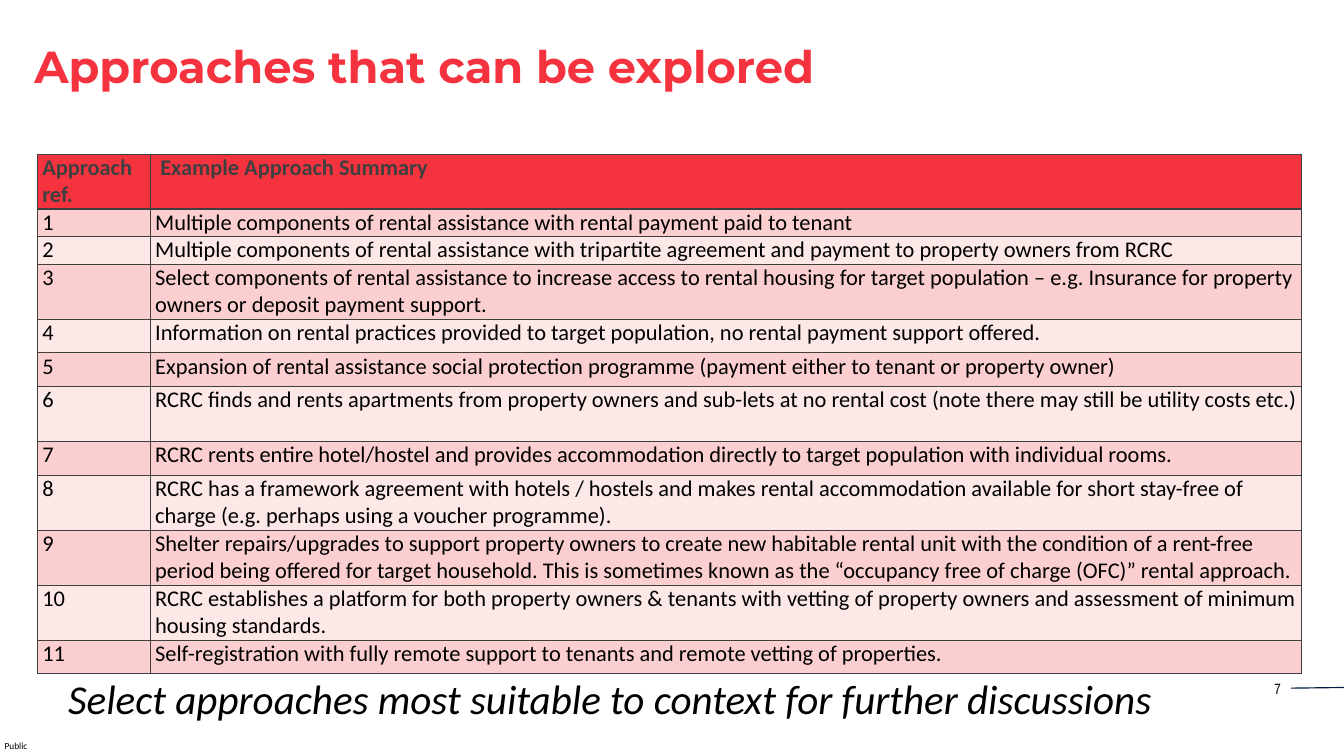
from lxml.etree import SubElement
from pptx import Presentation
from pptx.dml.color import RGBColor
from pptx.enum.shapes import MSO_CONNECTOR as Connector
from pptx.enum.text import MSO_ANCHOR as Anchor, PP_ALIGN as Align
from pptx.oxml.ns import qn
from pptx.util import Pt

RED = RGBColor(0xF5, 0x33, 0x3F)
PINK = RGBColor(0xFB, 0xCE, 0xCF)
PALE_PINK = RGBColor(0xFD, 0xE8, 0xE8)
GREY = RGBColor(0x3F, 0x3F, 0x3F)
NAVY = RGBColor(0x00, 0x1D, 0x41)
BLACK = RGBColor(0x00, 0x00, 0x00)

ONE_LINE, ROOMY, TWO_LINES = 29.5, 36, 59
HEADER = ("Approach ref.", " Example Approach Summary")
APPROACHES = [
    (ONE_LINE, "Multiple components of rental assistance with rental payment paid to tenant"),
    (ONE_LINE, "Multiple components of rental assistance with tripartite agreement and payment "
               "to property owners from RCRC"),
    (TWO_LINES, "Select components of rental assistance to increase access to rental housing for "
                "target population – e.g. Insurance for property owners or deposit payment support."),
    (ROOMY, "Information on rental practices provided to target population, no rental payment "
            "support offered."),
    (ROOMY, "Expansion of rental assistance social protection programme (payment either to "
            "tenant or property owner)"),
    (TWO_LINES, "RCRC finds and rents apartments from property owners and sub-lets at no rental "
                "cost (note there may still be utility costs etc.)"),
    (ROOMY, "RCRC rents entire hotel/hostel and provides accommodation directly to target "
            "population with individual rooms."),
    (TWO_LINES, "RCRC has a framework agreement with hotels / hostels and makes rental "
                "accommodation available for short stay-free of charge (e.g. perhaps using a "
                "voucher programme)."),
    (TWO_LINES, "Shelter repairs/upgrades to support property owners to create new habitable "
                "rental unit with the condition of a rent-free period being offered for target "
                "household. This is sometimes known as the “occupancy free of charge (OFC)” "
                "rental approach."),
    (TWO_LINES, "RCRC establishes a platform for both property owners & tenants with vetting of "
                "property owners and assessment of minimum housing standards."),
    (ROOMY, "Self-registration with fully remote support to tenants and remote vetting of "
            "properties."),
]


class PageBuilder:
    """Holds the current slide and the shared text style."""

    font = "Calibri"
    table_size = 24

    def __init__(self, page):
        self.page = page

    def add_text(self, frame, text, size, color=BLACK, font=None, bold=False, italic=False,
                 align=Align.LEFT):
        para = frame.paragraphs[0]
        para.alignment = align
        span = para.add_run()
        span.text = text
        span.font.name = font or self.font
        span.font.size = Pt(size)
        span.font.bold = bold
        span.font.italic = italic
        span.font.color.rgb = color

    def title(self, text, left, top, width, height):
        box = self.page.shapes.title
        box.left, box.top, box.width, box.height = map(Pt, (left, top, width, height))
        box.text_frame.word_wrap = True
        box.text_frame.vertical_anchor = Anchor.TOP
        self.add_text(box.text_frame, text, 48, RED, "Montserrat", bold=True)

    def text_box(self, text, left, top, width, height, size, inset=True, **style):
        box = self.page.shapes.add_textbox(*map(Pt, (left, top, width, height)))
        frame = box.text_frame
        frame.word_wrap = inset
        if not inset:
            frame.margin_left = frame.margin_right = 0
            frame.margin_top = frame.margin_bottom = 0
        self.add_text(frame, text, size, **style)

    def line(self, x1, y1, x2, y2, color, weight):
        line = self.page.shapes.add_connector(Connector.STRAIGHT, *map(Pt, (x1, y1, x2, y2)))
        line.line.color.rgb = color
        line.line.width = Pt(weight)
        SubElement(line._element.spPr, qn("a:effectLst"))

    def cell(self, cell, text, fill, color=BLACK, bold=False, top=1, bottom=1):
        """Fill in one cell; top and bottom are border widths."""
        cell.margin_left = cell.margin_right = Pt(5)
        cell.margin_top = cell.margin_bottom = 0
        self.add_text(cell.text_frame, text, self.table_size, color, bold=bold)
        properties = cell._tc.get_or_add_tcPr()
        for side, weight in (("L", 1), ("R", 1), ("T", top), ("B", bottom)):
            border = SubElement(properties, qn(f"a:ln{side}"), w=str(Pt(weight)))
            SubElement(SubElement(border, qn("a:solidFill")), qn("a:srgbClr"), val=str(GREY))
        cell.fill.solid()
        cell.fill.fore_color.rgb = fill

    def table(self, header, approaches, left, top, widths):
        heights = [TWO_LINES] + [height for height, _ in approaches]
        table = self.page.shapes.add_table(
            len(heights), len(widths), Pt(left), Pt(top), Pt(sum(widths)), Pt(sum(heights))).table
        for column, width in zip(table.columns, widths):
            column.width = Pt(width)
        for row, height in zip(table.rows, heights):
            row.height = Pt(height)
        for column, text in enumerate(header):
            self.cell(table.cell(0, column), text, RED, GREY, bold=True, bottom=3)
        for number, (_, summary) in enumerate(approaches, 1):
            fill = PINK if number % 2 else PALE_PINK
            for column, text in enumerate((str(number), summary)):
                self.cell(table.cell(number, column), text, fill, top=3 if number == 1 else 1)


def main():
    deck = Presentation()
    deck.slide_width, deck.slide_height = Pt(1440), Pt(810)
    builder = PageBuilder(deck.slides.add_slide(deck.slide_layouts[5]))

    builder.text_box("Public", 5, 793.5, 27, 12, 10, inset=False)
    builder.text_box("7", 1327.5, 724.5, 52, 26.5, 16, font="Arial Narrow", align=Align.RIGHT)
    builder.line(1383, 737.3, 1440, 736.6, NAVY, 1.25)
    builder.title("Approaches that can be explored", 29.5, 38, 1238, 65.5)
    builder.table(HEADER, APPROACHES, 40.3, 165, (121, 1233.4))
    builder.text_box("Select approaches most suitable to context for further discussions",
                     66, 718.5, 1354, 60.5, 44, italic=True)
    deck.save("out.pptx")


if __name__ == "__main__":
    main()
